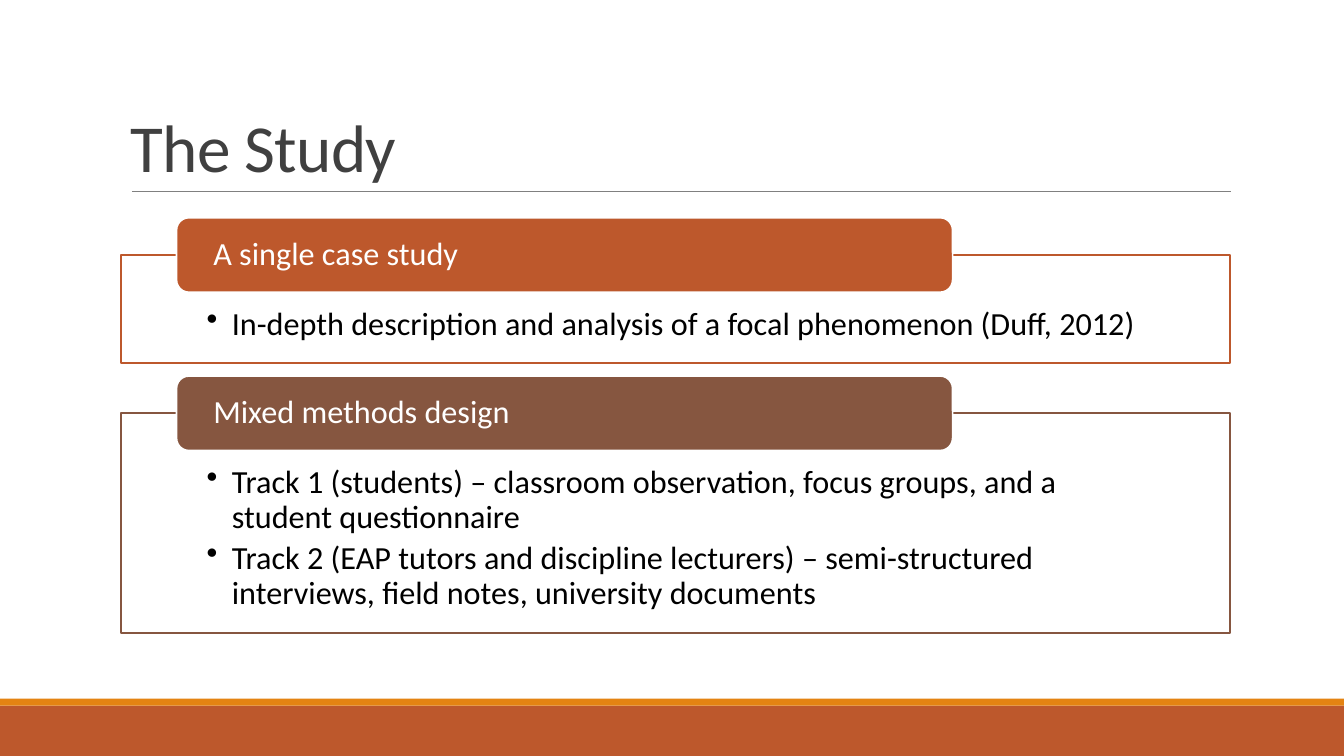
import pptx
import pptx.util
import pptx.dml.color
import pptx.enum.shapes
import pptx.enum.text
import lxml.etree

Pt = pptx.util.Pt
Inches = pptx.util.Inches
KIND = pptx.enum.shapes.MSO_SHAPE
ANCHOR = pptx.enum.text.MSO_ANCHOR
ALIGN = pptx.enum.text.PP_ALIGN
NS = "{http://schemas.openxmlformats.org/drawingml/2006/main}"

HUES = {
    "rust": "BD582C",
    "brown": "865640",
    "amber": "E48312",
    "rule": "808080",
    "title": "404040",
    "black": "000000",
    "white": "FFFFFF",
}

# Panel and label sizes, in hundredths of the slide's width and height
LEFT, WIDE = 9, 82.5
TAB_LEFT, TAB_WIDE, TAB_HIGH = 13.13, 57.75, 9.87
TOP, GAP = 28.8, 1.73

TOPICS = [
    ("A single case study", "rust", 14.27,
     ["In-depth description and analysis of a focal phenomenon (Duff, 2012)"]),
    ("Mixed methods design", "brown", 29.07,
     ["Track 1 (students) – classroom observation, focus groups, and a "
      "student questionnaire",
      "Track 2 (EAP tutors and discipline lecturers) – semi-structured "
      "interviews, field notes, university documents"]),
]


class Page:
    """Draws on one slide; places are in hundredths of its width and height."""

    def __init__(self, deck):
        self.deck = deck
        self.slide = deck.slides.add_slide(deck.slide_layouts[6])
        self.font = "Calibri"

    def place(self, *spots):
        sides = (self.deck.slide_width, self.deck.slide_height)
        return [round(spot * sides[i % 2] / 100) for i, spot in enumerate(spots)]

    def hue(self, name):
        return pptx.dml.color.RGBColor.from_string(HUES[name])

    def box(self, kind, spots, fill, line=None):
        shape = self.slide.shapes.add_shape(kind, *self.place(*spots))
        shape.shadow.inherit = False
        shape.fill.solid()
        shape.fill.fore_color.rgb = self.hue(fill)
        if line:
            shape.line.color.rgb = self.hue(line)
            shape.line.width = Pt(1.25)
        else:
            shape.line.fill.background()
        return shape

    def rule(self, spots, hue):
        line = self.slide.shapes.add_connector(
            pptx.enum.shapes.MSO_CONNECTOR.STRAIGHT, *self.place(*spots))
        line.line.color.rgb = self.hue(hue)
        line.line.width = Pt(0.5)
        lxml.etree.SubElement(line._element.spPr, NS + "effectLst")

    def letter(self, shape, texts, size, hue, anchor, inset, lead=0.9):
        """Fill a shape with paragraphs; inset is left, top, right, bottom in inches."""
        frame = shape.text_frame
        frame.word_wrap = True
        frame.vertical_anchor = anchor
        (frame.margin_left, frame.margin_top,
         frame.margin_right, frame.margin_bottom) = map(Inches, inset)
        frame.text = "\n".join(texts)
        for para in frame.paragraphs:
            para.alignment = ALIGN.LEFT
            para.line_spacing = lead
            para.font.name = self.font
            para.font.size = Pt(size)
            para.font.color.rgb = self.hue(hue)
        return frame.paragraphs

    def title(self, text, spots):
        shape = self.slide.shapes.add_textbox(*self.place(*spots))
        paras = self.letter(shape, [text], 48, "title", ANCHOR.BOTTOM,
                            (0.1, 0.05, 0.1, 0.05), 0.85)
        paras[0].runs[0].font._element.set("spc", "-50")

    def panel(self, spots, hue, points):
        shape = self.box(KIND.RECTANGLE, spots, "white", hue)
        for para in self.letter(shape, points, 23, "black", ANCHOR.TOP,
                                (0.85, 0.52, 0.85, 0.18)):
            para.space_after = Pt(4.5)
            props = para._p.get_or_add_pPr()
            props.set("marL", str(Inches(0.25)))
            props.set("indent", str(-Inches(0.25)))
            mark = lxml.etree.Element(NS + "buChar", char="•")
            props.find(NS + "defRPr").addprevious(mark)

    def label(self, spots, hue, text):
        shape = self.box(KIND.ROUNDED_RECTANGLE, spots, hue, "white")
        self.letter(shape, [text], 23, "white", ANCHOR.MIDDLE, (0.33, 0, 0.33, 0))


def main():
    deck = pptx.Presentation()
    deck.slide_width, deck.slide_height = Inches(13.33), Inches(7.5)
    page = Page(deck)
    page.box(KIND.RECTANGLE, (0, 93.33, 100, 6.67), "rust")
    page.box(KIND.RECTANGLE, (0, 92.4, 100, 0.93), "amber")
    page.rule((9.82, 25.33, 91.6, 25.33), "rule")
    page.title("The Study", (LEFT, 4.13, WIDE, 21.2))

    top = TOP
    for name, hue, high, points in TOPICS:
        edge = top + TAB_HIGH / 2
        page.panel((LEFT, edge, WIDE, high), hue, points)
        page.label((TAB_LEFT, top, TAB_WIDE, TAB_HIGH), hue, name)
        top = edge + high + GAP
    deck.save("out.pptx")


if __name__ == "__main__":
    main()
